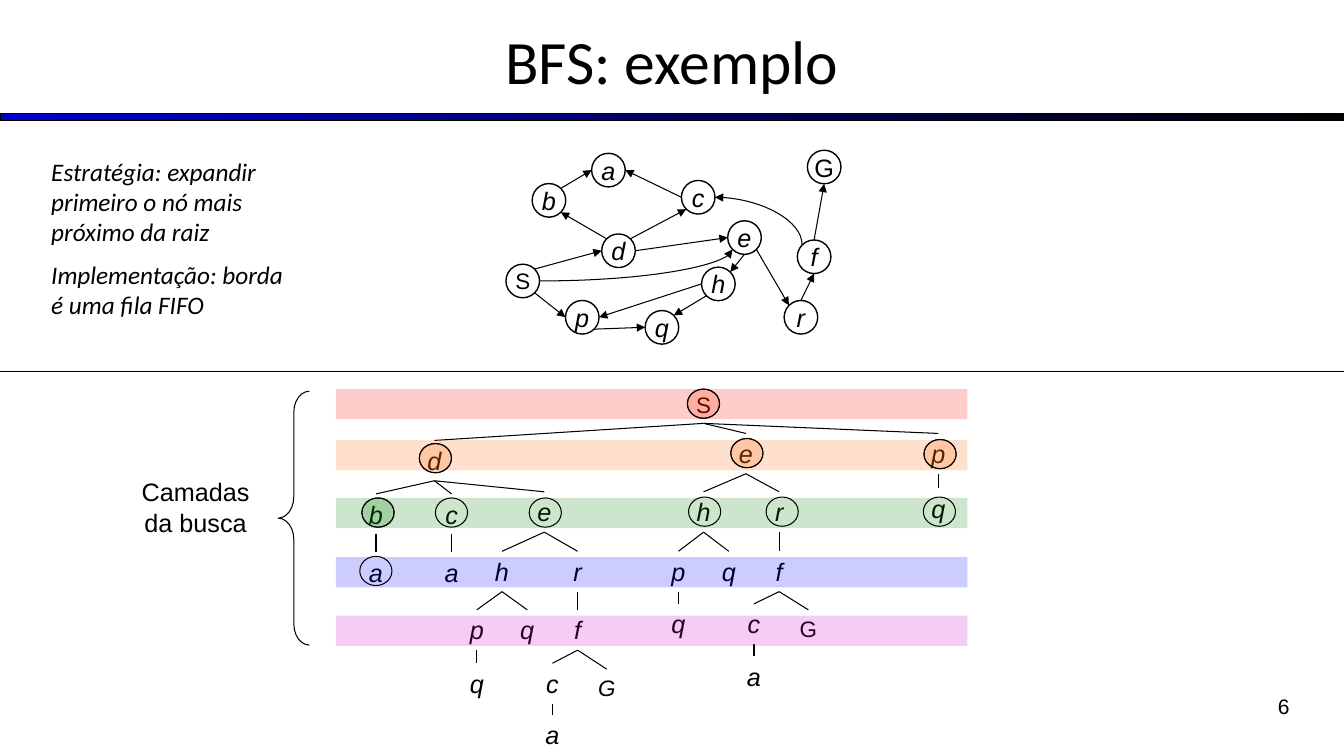
from lxml.etree import SubElement
from pptx import Presentation
from pptx.dml.color import RGBColor
from pptx.enum.shapes import MSO_CONNECTOR, MSO_SHAPE
from pptx.enum.text import MSO_ANCHOR, PP_ALIGN
from pptx.oxml.ns import qn
from pptx.util import Pt

COLORS = {"ink": "000000", "bar": "0000CC", "root": "FF3300", "red": "FF0000",
          "orange": "FF6600", "green": "008000", "blue": "0000FF", "purple": "CC00CC"}
NODE = 24
DIAGONAL = 0.71
COMPASS = {"N": (0, -1), "S": (0, 1), "W": (-1, 0), "E": (1, 0),
           "NW": (-DIAGONAL, -DIAGONAL), "NE": (DIAGONAL, -DIAGONAL),
           "SW": (-DIAGONAL, DIAGONAL), "SE": (DIAGONAL, DIAGONAL)}
GRAPH_NODES = {"S": (0, 81.4), "G": (215.3, 0), "d": (68.4, 59.8), "b": (18.7, 23.8),
               "p": (42.5, 107.3), "q": (99.4, 114.5), "c": (125.3, 21.6),
               "e": (158.4, 50.4), "h": (139.7, 83.5), "a": (61.2, 2.2),
               "f": (208.1, 64.1), "r": (198.7, 107.3)}
GRAPH_EDGES = ["S SE p W", "p SE q W", "h SW q NE", "h W p E", "e S h NE", "e SE r NW",
               "r N f S", "f N G S", "S NE d W", "d NW b SE", "b NE a W", "c W a E",
               "d NE c SW", "d E e W"]
TREE = ("S", 262.6, 0, [
    ("d", 70.3, 38.8, [
        ("b", 28.6, 77, [("a", 28.6, 118.8, [])]),
        ("c", 82.6, 77, [("a", 82.6, 118.8, [])]),
        ("e", 148.8, 75.5, [
            ("h", 118.6, 118, [
                ("p", 100.6, 159.8, [("q", 100.6, 198, [])]),
                ("q", 136.6, 159.8, [])]),
            ("r", 172.6, 118, [
                ("f", 172.6, 159.8, [
                    ("c", 154.6, 198, [("a", 154.6, 234.7, [])]),
                    ("G", 193.4, 202.2, [])])])])]),
    ("e", 292.8, 33.8, [
        ("h", 262.6, 75.5, [
            ("p", 244.6, 118, [("q", 244.6, 155.5, [])]),
            ("q", 280.6, 118, [])]),
        ("r", 316.6, 75.5, [
            ("f", 316.6, 118, [
                ("c", 298.6, 155.5, [("a", 298.6, 192.9, [])]),
                ("G", 337.4, 159.8, [])])])]),
    ("p", 430.3, 33.8, [("q", 430.3, 72.7, [])])])
BANDS = [(2.1, "red"), (38.6, "orange"), (79.9, "green"), (122.2, "blue"), (163.9, "purple")]
RINGS = [(251, 2.1, "root"), (59.5, 41, "orange"), (282, 37.4, "orange"),
         (420, 38.1, "orange"), (18.5, 79.9, "green"), (71, 79.9, None), (138, 79.9, None),
         (251.8, 79.2, None), (307.2, 79.2, None), (419.5, 79.2, None), (17, 121.6, None)]


def color(name):
    """Return the named colour."""
    return RGBColor.from_string(COLORS[name])


def write(frame, lines, size, font="Arial", italic=False, align=PP_ALIGN.CENTER):
    """Fill a text frame with equally styled paragraphs."""
    for index, line in enumerate(lines):
        paragraph = frame.add_paragraph() if index else frame.paragraphs[0]
        paragraph.text = line
        paragraph.alignment = align
        paragraph.space_before = Pt(size / 2 if index else 0)
        paragraph.font.size = Pt(size)
        paragraph.font.name = font
        paragraph.font.italic = italic
        paragraph.font.color.rgb = color("ink")


def add_text(slide, box, lines, size, **style):
    """Add a wrapping text box and return its frame."""
    frame = slide.shapes.add_textbox(*map(Pt, box)).text_frame
    frame.word_wrap = True
    write(frame, lines, size, **style)
    return frame


def add_outline(slide, kind, box, fill=None, line=0.75):
    """Add a preset shape with an optional translucent fill and outline."""
    shape = slide.shapes.add_shape(kind, *map(Pt, box))
    shape.shadow.inherit = False
    if fill:
        shape.fill.solid()
        shape.fill.fore_color.rgb = color(fill)
        tint = shape.fill._xPr.find(qn("a:solidFill"))[0]
        SubElement(tint, qn("a:alpha")).set("val", "20000")
    else:
        shape.fill.background()
    if line:
        shape.line.color.rgb = color("ink")
        shape.line.width = Pt(line)
    else:
        shape.line.fill.background()
    return shape


def add_line(slide, start, end, kind=MSO_CONNECTOR.STRAIGHT, arrow=False):
    """Add a thin black connector, with an arrowhead if asked."""
    connector = slide.shapes.add_connector(kind, *map(Pt, (*start, *end)))
    connector.line.color.rgb = color("ink")
    connector.line.width = Pt(0.75)
    if arrow:
        SubElement(connector.line._get_or_add_ln(), qn("a:tailEnd")).set("type", "triangle")
    SubElement(connector._element.spPr, qn("a:effectLst"))
    return connector


def add_curve(slide, start, end, upright=False):
    """Add a quarter-curve arrow; an upright one leaves its start vertically."""
    if upright:
        middle_x, middle_y = (start[0] + end[0]) / 2, (start[1] + end[1]) / 2
        half_x, half_y = (start[0] - end[0]) / 2, (start[1] - end[1]) / 2
        start = (middle_x + half_y, middle_y - half_x)
        end = (middle_x - half_y, middle_y + half_x)
    curve = add_line(slide, start, end, MSO_CONNECTOR.CURVE, arrow=True)
    properties = curve._element.spPr
    properties.find(qn("a:prstGeom")).set("prst", "curvedConnector2")
    if upright:
        properties.find(qn("a:xfrm")).set("rot", "5400000")


def add_header(slide, left, top, width, height):
    """Draw the title and the gradient bar below it."""
    frame = add_text(slide, (left, top - 2, width, height), ["BFS: exemplo"], 44, font="Calibri")
    frame.vertical_anchor = MSO_ANCHOR.MIDDLE
    bar = add_outline(slide, MSO_SHAPE.RECTANGLE, (left, top + 81.4, width, 5))
    bar.fill.gradient()
    bar.fill.gradient_angle = 0
    for stop, name in zip(bar.fill.gradient_stops, ("bar", "ink")):
        stop.color.rgb = color(name)


def add_graph(slide, left, top):
    """Draw the state graph with its arrows."""
    def site(name, side):
        """Return the point on a node's rim in a compass direction."""
        x, y = GRAPH_NODES[name]
        across, down = COMPASS[side]
        radius = NODE / 2
        return left + x + radius * (1 + across), top + y + radius * (1 + down)

    for name, (x, y) in GRAPH_NODES.items():
        node = add_outline(slide, MSO_SHAPE.FLOWCHART_CONNECTOR,
                           (left + x, top + y, NODE, NODE), line=1)
        frame = node.text_frame
        frame.word_wrap = False
        frame.vertical_anchor = MSO_ANCHOR.MIDDLE
        write(frame, [name], 16 if name == "S" else 18, italic=name.islower())
    for edge in GRAPH_EDGES:
        source, leaving, target, entering = edge.split()
        add_line(slide, site(source, leaving), site(target, entering), arrow=True)
    add_curve(slide, site("f", "NW"), site("c", "E"), upright=True)
    add_curve(slide, site("S", "E"), site("e", "SW"))


def add_branch(slide, left, top, branch):
    """Draw a tree node, its lines and everything below it."""
    label, x, y, children = branch
    size, height = (18, 28.8) if label.islower() else (16, 26.6)
    italic = label.islower() or (label == "G" and y > 200)
    add_text(slide, (left + x - 15, top + y, 30, height), [label], size, italic=italic)
    for child in children:
        add_line(slide, (left + x, top + y + height), (left + child[1], top + child[2]))
        add_branch(slide, left, top, child)


def add_search_tree(slide, left, top):
    """Draw the search tree, its layer bands, rings and brace."""
    add_branch(slide, left, top, TREE)
    for y, name in BANDS:
        add_outline(slide, MSO_SHAPE.RECTANGLE, (left, top + y, 451, 21.6), name, line=0)
    brace = add_outline(slide, MSO_SHAPE.LEFT_BRACE, (left - 41.3, top + 3.6, 22.3, 181.4))
    brace.adjustments[0] = 0.68
    add_text(slide, (left - 150, top + 61.2, 99.4, 51), ["Camadas da busca"], 18)
    for x, y, name in RINGS:
        for fill in [None, name] if name else [None]:
            add_outline(slide, MSO_SHAPE.OVAL, (left + x, top + y, 23, 20.9), fill)


def add_strategy(slide, left, top, width, height):
    """Write the strategy notes."""
    add_text(slide, (left, top, width, height),
             ["Estratégia: expandir primeiro o nó mais próximo da raiz",
              "Implementação: borda é uma fila FIFO"],
             18, font="Calibri", italic=True, align=PP_ALIGN.LEFT)


def main():
    """Build and save the slide."""
    presentation = Presentation()
    presentation.slide_width, presentation.slide_height = Pt(960), Pt(540)
    slide = presentation.slides.add_slide(presentation.slide_layouts[6])
    add_header(slide, 0, 0, 960, 90)
    add_search_tree(slide, 240, 275.8)
    add_graph(slide, 361.4, 107.3)
    add_line(slide, (0, 265.7), (960, 265.7))
    add_strategy(slide, 29.5, 108, 186.5, 127.4)
    add_text(slide, (760.3, 491.8, 167.8, 37.4), ["6"], 15, align=PP_ALIGN.RIGHT)
    presentation.save("out.pptx")


if __name__ == "__main__":
    main()
